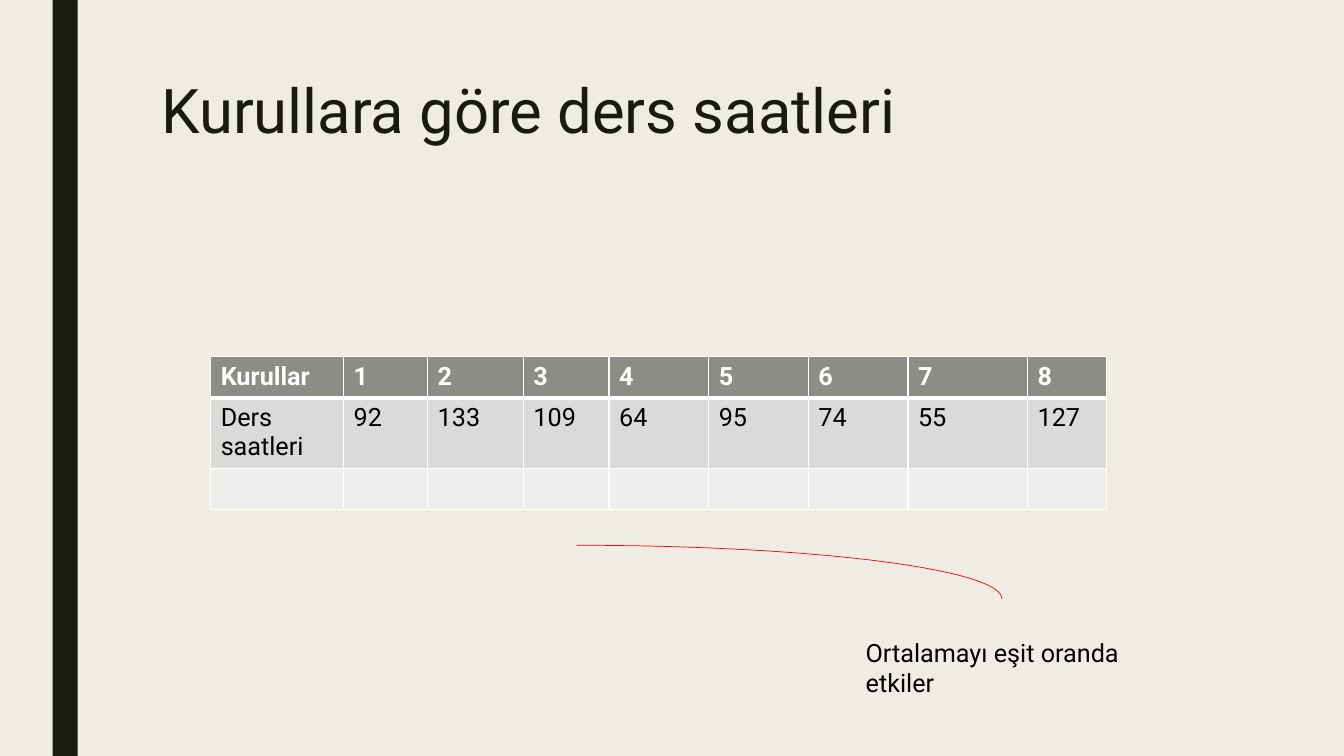
from dataclasses import dataclass

from lxml import etree
from pptx import Presentation
from pptx import util as u
from pptx.dml.color import RGBColor
from pptx.enum import shapes, text
from pptx.oxml import ns

FONT = "Roboto"
DARK = "191B0E"
WHITE = "FFFFFF"
BLACK = "000000"


@dataclass(frozen=True)
class Box:
    left: float
    top: float
    width: float
    height: float

    def lengths(self):
        return [u.Pt(value) for value in (self.left, self.top, self.width, self.height)]


@dataclass(frozen=True)
class Label:
    box: Box
    words: str
    size: float
    color: str
    line_spacing: float = 1.0


@dataclass(frozen=True)
class RowStyle:
    values: tuple[str, ...]
    fill: str
    color: str
    bold: bool
    top_border: float
    bottom_border: float


TITLE = Label(Box(108, 54, 756, 116.6), "Kurullara göre ders saatleri", 44, DARK, 0.89)
NOTE = Label(Box(611.3, 451.4, 240.5, 29), "Ortalamayı eşit oranda etkiler", 18, BLACK)
SIDE_BAR = Box(37.5, 0, 18, 540)
ARC = Box(108, 389.5, 607.7, 76.3)

TABLE_BOX = Box(150.5, 254.9, 640, 87.6)
COLUMN_WIDTHS = (95, 60, 68.4, 61.2, 71.2, 71.2, 71.2, 85.4, 56.4)
HOURS = (92, 133, 109, 64, 95, 74, 55, 127)
ROWS = (
    RowStyle(("Kurullar", *(str(n) for n in range(1, len(HOURS) + 1))),
             "8C8D86", WHITE, True, 1, 3),
    RowStyle(("Ders saatleri", *map(str, HOURS)), "DADBD9", BLACK, False, 3, 1),
    RowStyle(("",) * len(COLUMN_WIDTHS), "EEEEED", BLACK, False, 1, 1),
)


def rgb(value: str) -> RGBColor:
    return RGBColor.from_string(value)


def paint(fill, color: str) -> None:
    fill.solid()
    fill.fore_color.rgb = rgb(color)


def write(paragraph, words: str, size: float, color: str, bold: bool = False) -> None:
    run = paragraph.add_run()
    run.text = words
    for name, value in {"name": FONT, "size": u.Pt(size), "bold": bold}.items():
        setattr(run.font, name, value)
    run.font.color.rgb = rgb(color)


def add_label(slide, label: Label) -> None:
    frame = slide.shapes.add_textbox(*label.box.lengths()).text_frame
    frame.word_wrap = True
    frame.vertical_anchor = text.MSO_ANCHOR.TOP
    paragraph = frame.paragraphs[0]
    paragraph.line_spacing = label.line_spacing
    write(paragraph, label.words, label.size, label.color)


def add_shape(slide, kind, box: Box):
    shape = slide.shapes.add_shape(kind, *box.lengths())
    shape.shadow.inherit = False
    return shape


def set_borders(cell, widths: dict[str, float]) -> None:
    """Draw white cell borders; they must precede the cell's fill in the XML."""
    properties = cell._tc.get_or_add_tcPr()
    for side, width in widths.items():
        line = etree.SubElement(properties, ns.qn(f"a:ln{side}"), w=str(u.Pt(width)))
        fill = etree.SubElement(line, ns.qn("a:solidFill"))
        etree.SubElement(fill, ns.qn("a:srgbClr"), val=WHITE)


def add_hours_table(slide) -> None:
    table = slide.shapes.add_table(
        len(ROWS), len(COLUMN_WIDTHS), *TABLE_BOX.lengths()).table
    for column, width in zip(table.columns, COLUMN_WIDTHS):
        column.width = u.Pt(width)
    for row, style in zip(table.rows, ROWS):
        row.height = u.Pt(TABLE_BOX.height / len(ROWS))
        for cell, value in zip(row.cells, style.values):
            set_borders(cell, {"L": 1, "R": 1, "T": style.top_border,
                               "B": style.bottom_border})
            paint(cell.fill, style.fill)
            if value:
                write(cell.text_frame.paragraphs[0], value, 18, style.color, style.bold)


def main() -> None:
    presentation = Presentation()
    presentation.slide_width, presentation.slide_height = u.Pt(960), u.Pt(540)
    slide = presentation.slides.add_slide(presentation.slide_layouts[6])
    paint(slide.background.fill, "EFEDE3")

    side_bar = add_shape(slide, shapes.MSO_SHAPE.RECTANGLE, SIDE_BAR)
    paint(side_bar.fill, DARK)
    side_bar.line.fill.background()

    add_label(slide, TITLE)
    add_hours_table(slide)

    arc = add_shape(slide, shapes.MSO_SHAPE.ARC, ARC)
    arc.fill.background()
    arc.line.width = u.Pt(0.5)
    paint(arc.line.fill, "FF0000")

    add_label(slide, NOTE)
    presentation.save("out.pptx")


if __name__ == "__main__":
    main()
